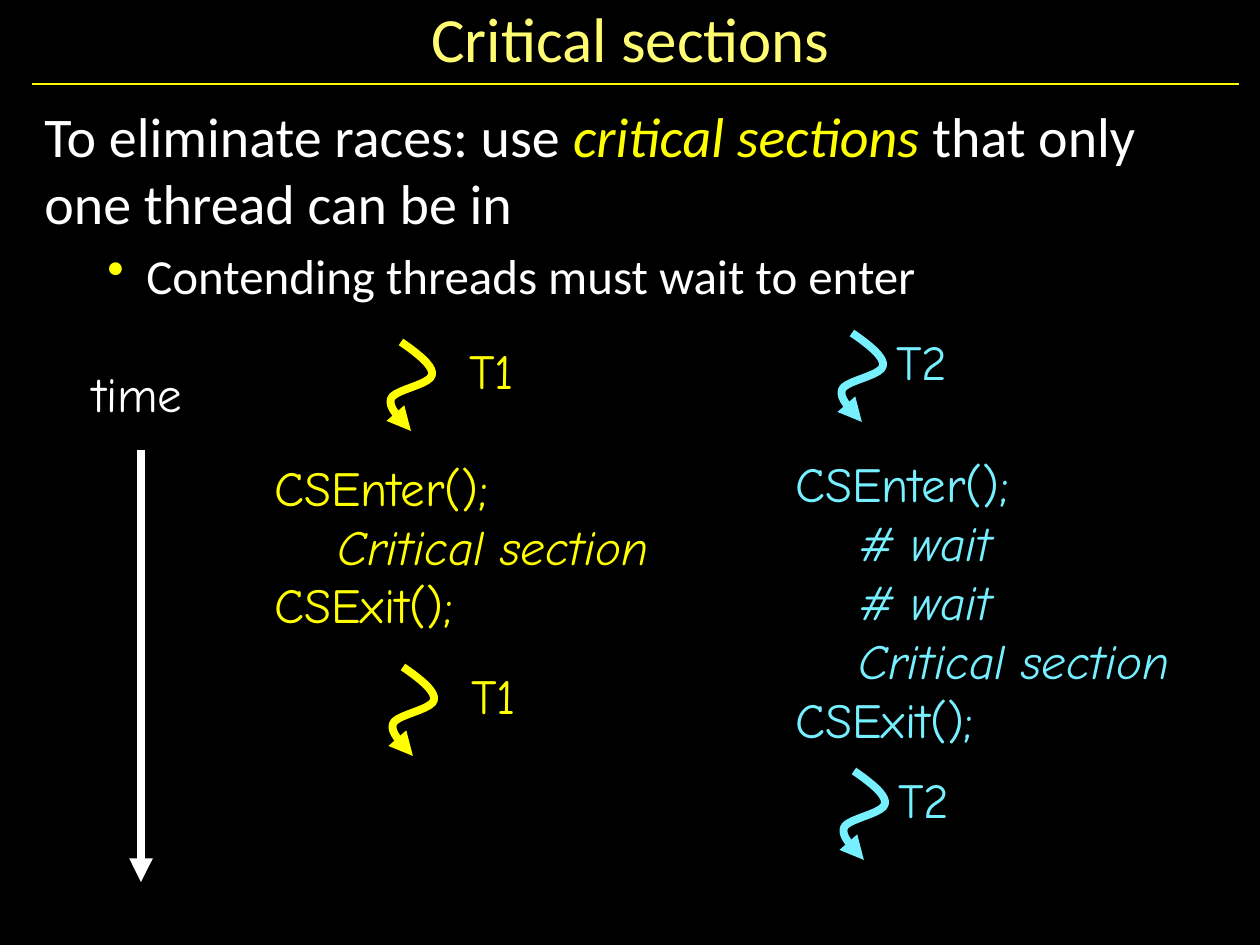
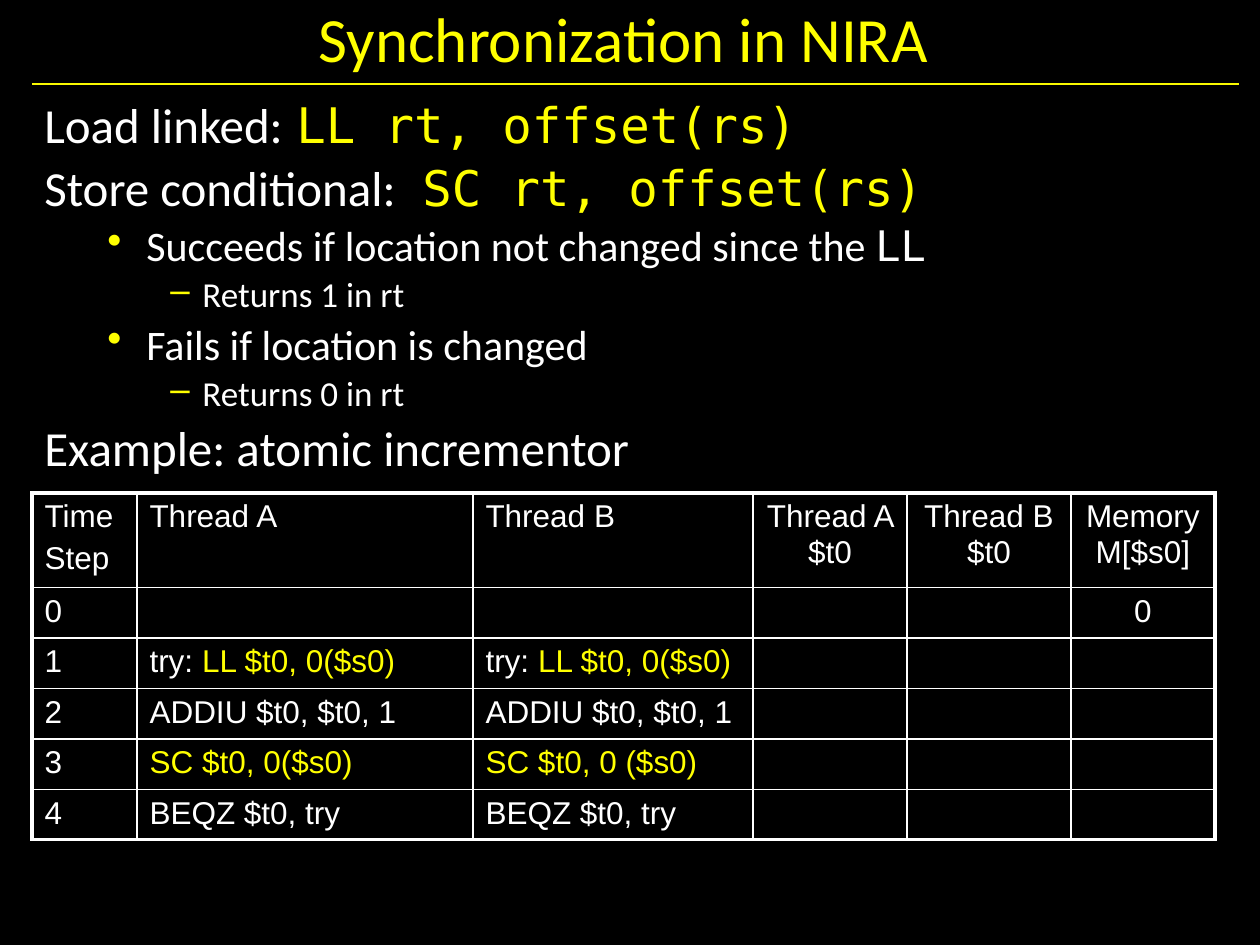
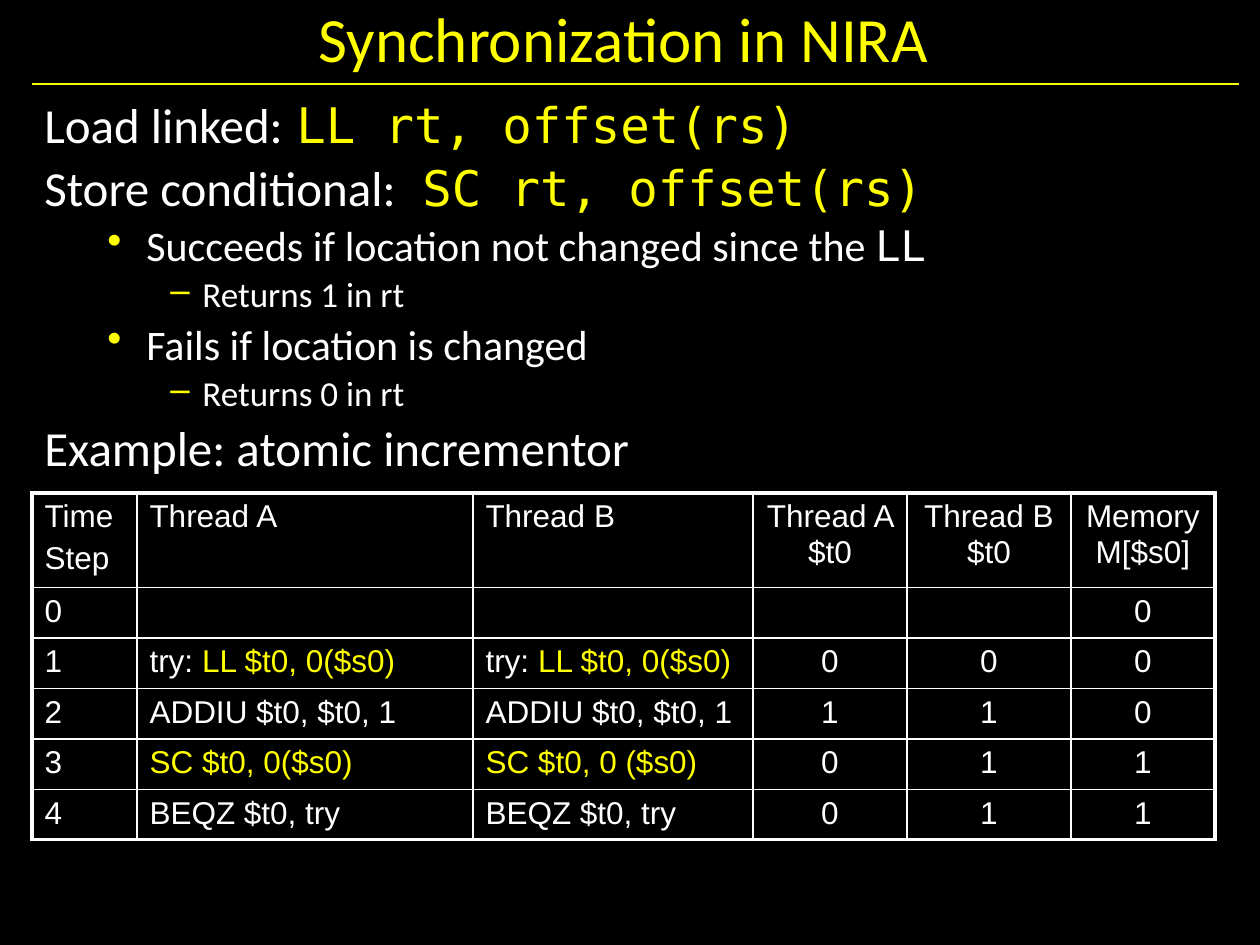
from pptx import Presentation
from pptx.dml.color import RGBColor
from pptx.enum.shapes import MSO_CONNECTOR
from pptx.enum.text import MSO_ANCHOR, PP_ALIGN
from pptx.oxml.ns import qn
from pptx.util import Pt
from lxml import etree

STRAIGHT = MSO_CONNECTOR.STRAIGHT
TOP, MIDDLE = MSO_ANCHOR.TOP, MSO_ANCHOR.MIDDLE
LEFT, CENTER = PP_ALIGN.LEFT, PP_ALIGN.CENTER

PX_PER_INCH = 126
EMU_PER_PX = 914400 / PX_PER_INCH

BLACK, WHITE, YELLOW, CYAN = "000000", "FFFFFF", "FFFF00", "76EFFF"
PALE_YELLOW, RULE_YELLOW = "FFFC72", "F9F900"
SANS, HAND, MONO, TABLE_FONT = "Calibri", "Comic Neue", "DejaVu Sans Mono", "Arial"

# Body levels: left margin, hanging indent, bullet
LEVELS = [(0, 0, None), (102, -39, "•"), (158, -32, "–")]
CODE_TAB = 378

# Squiggle: start point, then the three points of each cubic curve
SQUIGGLE_START = (14, 0)
SQUIGGLE_CURVES = [
    [(30, 11), (47, 24), (45, 33)],
    [(43, 43), (6, 48), (4, 57)],
    [(0, 67), (20, 83), (24, 89)],
]
CURVE_STEPS = 10

# Trace table
COLUMN_WIDTHS = [105, 336, 280, 154, 164, 144]
HEADER_HEIGHT, ROW_HEIGHT = 90, 48
HEADER = ["Time\nStep", "Thread A", "Thread B",
          "Thread A $t0", "Thread B $t0", "Memory M[$s0]"]
LOAD = [("try: ", {}), ("LL $t0, 0($s0)", {"color": YELLOW})]
INSTRUCTIONS = [
    ("", ""),
    (LOAD, LOAD),
    ("ADDIU $t0, $t0, 1", "ADDIU $t0, $t0, 1"),
    ([("SC $t0, 0($s0)", {"color": YELLOW})], [("SC $t0, 0 ($s0)", {"color": YELLOW})]),
    ("BEQZ $t0, try", "BEQZ $t0, try"),
]
START_VALUES = [("", "", "0")] + [("", "", "")] * 4
TRACED_VALUES = [("", "", "0"), ("0", "0", "0"), ("1", "1", "0"),
                 ("0", "1", "1"), ("0", "1", "1")]


def px(length):
    return round(length * EMU_PER_PX)


def rgb(hex_color):
    return RGBColor.from_string(hex_color)


def style_font(font, size=None, name=None, color=None, italic=None):
    if size:
        font.size = Pt(size)
    if name:
        font.name = name
    if color:
        font.color.rgb = rgb(color)
    if italic is not None:
        font.italic = italic


def set_indent(paragraph, margin, indent, bullet=None, tab=None):
    props = paragraph._p.get_or_add_pPr()
    props.set("marL", str(px(margin)))
    props.set("indent", str(px(indent)))
    if bullet:
        bullet_color = etree.SubElement(props, qn("a:buClr"))
        etree.SubElement(bullet_color, qn("a:srgbClr"), val=YELLOW)
        etree.SubElement(props, qn("a:buChar"), char=bullet)
    if tab:
        tabs = etree.SubElement(props, qn("a:tabLst"))
        etree.SubElement(tabs, qn("a:tab"), pos=str(px(tab)), algn="l")


def fill_paragraph(paragraph, content, size, name, color, align=LEFT, italic=None):
    """Content is a string or a list of (text, font changes)."""
    paragraph.alignment = align
    style_font(paragraph.font, size, name, color, italic)
    runs = [(content, {})] if isinstance(content, str) else content
    for text, changes in runs:
        run = paragraph.add_run()
        run.text = text
        style_font(run.font, **changes)


def paragraphs_for(frame, count):
    return [frame.paragraphs[0]] + [frame.add_paragraph() for _ in range(count - 1)]


def add_text_frame(slide, box, anchor):
    frame = slide.shapes.add_textbox(*map(px, box)).text_frame
    frame.word_wrap = True
    frame.vertical_anchor = anchor
    return frame


def add_label(slide, box, text, color, size=28, name=HAND):
    frame = add_text_frame(slide, box, MIDDLE)
    fill_paragraph(frame.paragraphs[0], text, size, name, color, CENTER)


def add_body(slide, height, items, line_spacing=None):
    """Items are (level, size, content)."""
    frame = add_text_frame(slide, (32, 95, 1197, height), TOP)
    for paragraph, (level, size, content) in zip(paragraphs_for(frame, len(items)), items):
        paragraph.level = level
        paragraph.space_before = Pt(size * 0.2)
        if line_spacing:
            paragraph.line_spacing = line_spacing
        set_indent(paragraph, *LEVELS[level], tab=None if level else CODE_TAB)
        fill_paragraph(paragraph, content, size, SANS, WHITE)


def add_code(slide, box, inner_lines, color):
    """Lines inside the critical section are indented and italic."""
    frame = add_text_frame(slide, box, MIDDLE)
    lines = ["CSEnter();", *inner_lines, "CSExit();"]
    for i, (paragraph, line) in enumerate(zip(paragraphs_for(frame, len(lines)), lines)):
        inside = 0 < i < len(lines) - 1
        if inside:
            paragraph.level = 1
            set_indent(paragraph, 63, 0)
        fill_paragraph(paragraph, line, 28, HAND, color, italic=inside)


def style_line(line, color, width, arrow=False):
    line.color.rgb = rgb(color)
    line.width = Pt(width)
    if arrow:
        etree.SubElement(line._get_or_add_ln(), qn("a:tailEnd"), type="triangle")


def add_line(slide, start, end, color, width, arrow=False):
    connector = slide.shapes.add_connector(STRAIGHT, *map(px, start + end))
    style_line(connector.line, color, width, arrow)
    etree.SubElement(connector._element.spPr, qn("a:effectLst"))


def squiggle_points():
    start = SQUIGGLE_START
    for c1, c2, end in SQUIGGLE_CURVES:
        for step in range(1, CURVE_STEPS + 1):
            t = step / CURVE_STEPS
            u = 1 - t
            yield tuple(u**3 * a + 3 * u * u * t * b + 3 * u * t * t * c + t**3 * d
                        for a, b, c, d in zip(start, c1, c2, end))
        start = end


def add_thread(slide, left, top, name, color, label_offset, label_width):
    builder = slide.shapes.build_freeform(px(left + SQUIGGLE_START[0]),
                                          px(top + SQUIGGLE_START[1]))
    builder.add_line_segments([(px(left + x), px(top + y)) for x, y in squiggle_points()],
                              close=False)
    squiggle = builder.convert_to_shape()
    squiggle.shadow.inherit = False
    squiggle.fill.background()
    style_line(squiggle.line, color, 4.5, arrow=True)
    add_label(slide, (left + label_offset, top - 8, label_width, 72), name, color)


def set_borders(cell, widths):
    props = cell._tc.get_or_add_tcPr()
    for side, width in widths.items():
        border = etree.SubElement(props, qn(f"a:ln{side}"), w=str(Pt(width)))
        fill = etree.SubElement(border, qn("a:solidFill"))
        etree.SubElement(fill, qn("a:srgbClr"), val=WHITE)


def add_trace_table(slide, values):
    rows = [HEADER] + [[str(step), *code, *registers] for step, (code, registers)
                       in enumerate(zip(INSTRUCTIONS, values))]
    heights = [HEADER_HEIGHT] + [ROW_HEIGHT] * len(INSTRUCTIONS)
    last_row, last_column = len(rows) - 1, len(HEADER) - 1
    table = slide.shapes.add_table(len(rows), len(HEADER), px(32), px(493),
                                   px(sum(COLUMN_WIDTHS)), px(sum(heights))).table
    table.first_row = table.horz_banding = False
    for column, width in zip(table.columns, COLUMN_WIDTHS):
        column.width = px(width)
    for r, (row, height) in enumerate(zip(rows, heights)):
        table.rows[r].height = px(height)
        for c, content in enumerate(row):
            cell = table.cell(r, c)
            outer = {"L": c == 0, "R": c == last_column, "T": r == 0, "B": r == last_row}
            set_borders(cell, {side: 2.25 if edge else 1 for side, edge in outer.items()})
            cell.fill.background()
            if not content:
                continue
            parts = content.split("\n") if isinstance(content, str) else [content]
            for paragraph, part in zip(paragraphs_for(cell.text_frame, len(parts)), parts):
                paragraph.space_before = Pt(3.6)
                fill_paragraph(paragraph, part, 18, TABLE_FONT, WHITE,
                               CENTER if c > 2 else LEFT)


def add_slide(prs, title, title_color=YELLOW):
    slide = prs.slides.add_slide(prs.slide_layouts[6])
    add_line(slide, (32, 84), (1239, 84), RULE_YELLOW, 0.75)
    add_label(slide, (32, 0, 1197, 74), title, title_color, 36, SANS)
    return slide


def add_critical_sections(prs):
    slide = add_slide(prs, "Critical sections", PALE_YELLOW)
    add_body(slide, 777, [
        (0, 32, [("To eliminate races: use ", {}),
                 ("critical sections ", {"color": YELLOW, "italic": True}),
                 ("that only one thread can be in", {})]),
        (1, 28, "Contending threads must wait to enter"),
    ])
    # Time axis
    add_label(slide, (73, 357, 129, 72), "time", WHITE)
    add_line(slide, (141, 450), (141, 882), WHITE, 4.5, arrow=True)
    # Threads before and after their critical sections
    for left, top in [(387, 342), (389, 667)]:
        add_thread(slide, left, top, "T1", YELLOW, 64, 81)
    for left, top in [(838, 333), (840, 771)]:
        add_thread(slide, left, top, "T2", CYAN, 40, 88)
    # Code of each thread
    add_code(slide, (262, 451, 456, 189), ["Critical section"], YELLOW)
    add_code(slide, (783, 446, 456, 310), ["# wait", "# wait", "Critical section"], CYAN)


def add_synchronization(prs, values):
    slide = add_slide(prs, "Synchronization in NIRA ")
    code = {"name": MONO, "color": YELLOW}
    add_body(slide, 431, [
        (0, 28, [("Load linked:\t", {}), ("LL rt, offset(rs)", code)]),
        (0, 28, [("Store conditional:\t", {}), ("SC rt, offset(rs)", code)]),
        (1, 24, [("Succeeds if location not changed since the ", {}), ("LL", {"name": MONO})]),
        (2, 20, "Returns 1 in rt"),
        (1, 24, "Fails if location is changed"),
        (2, 20, "Returns 0 in rt"),
        (0, 28, "Example: atomic incrementor"),
    ], line_spacing=0.9)
    add_trace_table(slide, values)


def main():
    prs = Presentation()
    prs.slide_width, prs.slide_height = px(1260), px(945)
    background = prs.slide_master.background.fill
    background.solid()
    background.fore_color.rgb = rgb(BLACK)

    add_critical_sections(prs)
    add_synchronization(prs, START_VALUES)
    add_synchronization(prs, TRACED_VALUES)
    prs.save("out.pptx")


if __name__ == "__main__":
    main()
